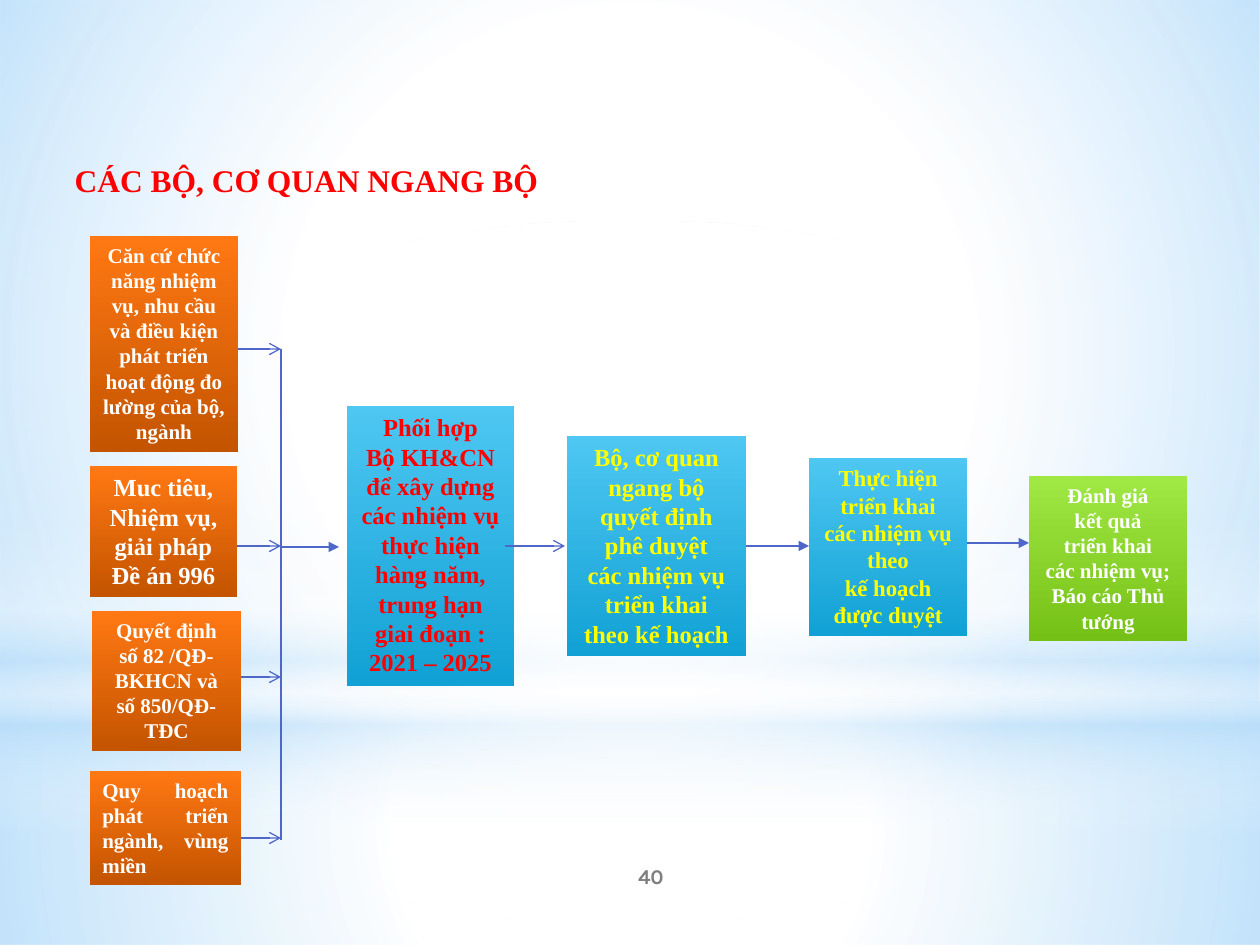
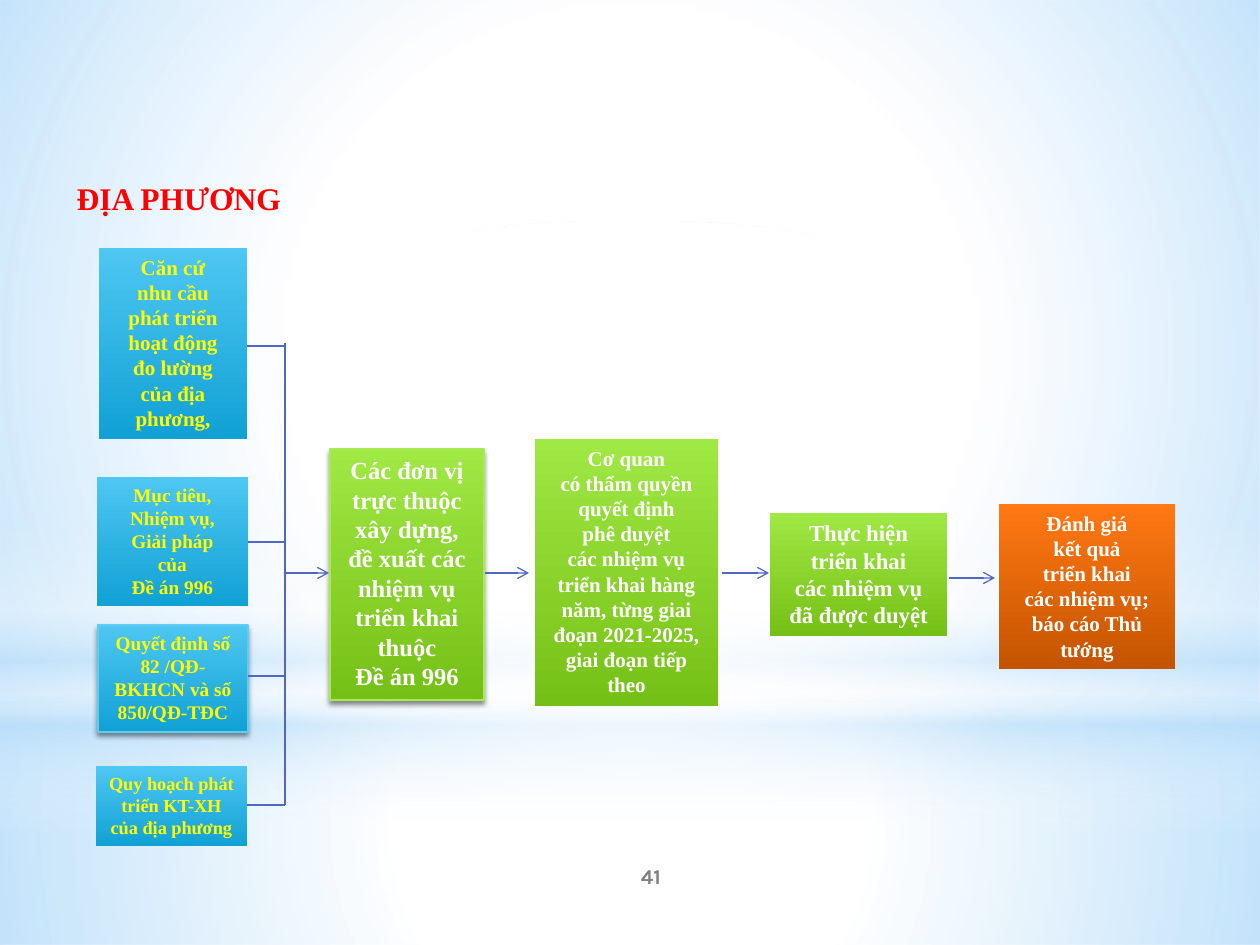
from collections import namedtuple

from lxml import etree
from pptx import Presentation
from pptx import util as u
from pptx.dml.color import RGBColor
from pptx.enum import shapes, text
from pptx.oxml import ns

PX = 914400 / 126
SERIF, SANS = "Times New Roman", "Karla"
RED = RGBColor(0xFF, 0x00, 0x00)
YELLOW = RGBColor(0xFF, 0xFF, 0x00)
WHITE = RGBColor(0xFF, 0xFF, 0xFF)
GREY = RGBColor(0x7F, 0x7F, 0x7F)
BLACK = RGBColor(0x00, 0x00, 0x00)
SKY = RGBColor(0xB4, 0xDC, 0xFA)
INDIGO = RGBColor(0x4E, 0x67, 0xC8)
BLUE_TOP, BLUE_END = RGBColor(0x4E, 0xC7, 0xF2), RGBColor(0x11, 0xA1, 0xD4)
GREEN_TOP, GREEN_END = RGBColor(0xA0, 0xE8, 0x44), RGBColor(0x75, 0xC0, 0x16)
ORANGE_TOP, ORANGE_END = RGBColor(0xFF, 0x78, 0x13), RGBColor(0xC4, 0x54, 0x00)
BLUE_EDGE, GREEN_EDGE = RGBColor(0x5E, 0xCC, 0xF3), RGBColor(0xA7, 0xEA, 0x52)
CENTER, LEFT, JUSTIFY = (
    text.PP_ALIGN.CENTER, text.PP_ALIGN.LEFT, text.PP_ALIGN.JUSTIFY)

Box = namedtuple("Box", "left top width height")
Look = namedtuple("Look", "top end ink edge", defaults=[None])
Source = namedtuple("Source", "box stub_y size lines align", defaults=[CENTER])
Stage = namedtuple("Stage", "box arrow head size look lines")

BLUE = Look(BLUE_TOP, BLUE_END, YELLOW)
BLUE_RED = BLUE._replace(ink=RED)
BLUE_RAISED = BLUE._replace(edge=BLUE_EDGE)
GREEN = Look(GREEN_TOP, GREEN_END, WHITE)
GREEN_RAISED = GREEN._replace(edge=GREEN_EDGE)
ORANGE = Look(ORANGE_TOP, ORANGE_END, WHITE)

BACKDROP = [
    (shapes.MSO_SHAPE.RECTANGLE, Box(0, 703, 1260, 242), True,
     [(0, WHITE, 91), (37, WHITE, 76), (100, SKY, 79)]),
    (shapes.MSO_SHAPE.RECTANGLE, Box(0, 0, 1260, 703), True,
     [(0, WHITE, 89), (48, WHITE, 62), (100, SKY, 79)]),
    (shapes.MSO_SHAPE.RECTANGLE, Box(0, 519, 1260, 315), False,
     [(0, WHITE, 0), (29, WHITE, 30), (45, SKY, 40),
      (55, WHITE, 26), (65, SKY, 60), (100, WHITE, 0)]),
    (shapes.MSO_SHAPE.OVAL, Box(0, 221, 1260, 703), True,
     [(0, WHITE, 100), (56, WHITE, 0)]),
]

MINISTRY_SOURCES = [
    (Source(Box(0, 0, 148, 216), 113, 12, [
        "Căn cứ chức năng nhiệm vụ, nhu cầu và điều kiện phát triển "
        "hoạt động đo lường của bộ, ngành"]), ORANGE),
    (Source(Box(0, 230, 147, 131), 310, 14, [
        "Muc tiêu, Nhiệm vụ,", "giải pháp", "Đề án 996"]), ORANGE),
    (Source(Box(2, 375, 149, 140), 441, 12, [
        "Quyết định số 82 /QĐ-BKHCN và số 850/QĐ-TĐC"]), ORANGE),
    (Source(Box(0, 535, 151, 114), 602, 12, [
        "Quy hoạch phát triển ngành, vùng miền"], JUSTIFY), ORANGE),
]
MINISTRY_STAGES = [
    Stage(Box(66, 0, 167, 280), (0, 58, 141), "triangle", 14, BLUE_RED, [
        "Phối hợp", "Bộ KH&CN để xây dựng các nhiệm vụ thực hiện hàng năm, "
        "trung hạn", "giai đoạn : 2021 – 2025"]),
    Stage(Box(286, 30, 179, 220), (224, 284, 140), "arrow", 14, BLUE, [
        "Bộ, cơ quan ngang bộ", "quyết định phê duyệt", "các nhiệm vụ",
        "triển khai theo kế hoạch"]),
    Stage(Box(528, 52, 158, 178), (465, 528, 140), "triangle", 13, BLUE, [
        "Thực hiện triển khai", "các nhiệm vụ", "theo",
        "kế hoạch được duyệt"]),
    Stage(Box(748, 70, 158, 165), (686, 748, 137), "triangle", 12, GREEN, [
        "Đánh giá", "kết quả", "triển khai", "các nhiệm vụ;",
        "Báo cáo Thủ tướng"]),
]
LOCAL_SOURCES = [
    (Source(Box(3, 0, 148, 191), 98, 12, [
        "Căn cứ", "nhu cầu", "phát triển hoạt động", "đo lường",
        "của địa phương,"]), BLUE),
    (Source(Box(1, 229, 151, 129), 294, 11, [
        "Mục tiêu, Nhiệm vụ,", "Giải pháp", "của", "Đề án 996"]), BLUE),
    (Source(Box(2, 377, 150, 107), 428, 11, [
        "Quyết định số 82 /QĐ-BKHCN và số 850/QĐ-TĐC"]), BLUE_RAISED),
    (Source(Box(0, 518, 151, 80), 557, 10.5, [
        "Quy hoạch phát triển KT-XH của địa phương"]), BLUE),
]
LOCAL_STAGES = [
    Stage(Box(46, 10, 154, 251), (0, 45, 134), "arrow", 14, GREEN_RAISED, [
        "Các đơn vị trực thuộc xây dựng, đề xuất các nhiệm vụ",
        "triển khai thuộc", "Đề án 996"]),
    Stage(Box(251, 0, 183, 267), (201, 245, 134), "arrow", 12, GREEN, [
        "Cơ quan", "có thẩm quyền", "quyết định", "phê duyệt",
        "các nhiệm vụ", "triển khai hàng năm, từng giai đoạn 2021-2025, "
        "giai đoạn tiếp theo"]),
    Stage(Box(486, 74, 177, 123), (438, 485, 134), "arrow", 13, GREEN, [
        "Thực hiện", "triển khai", "các nhiệm vụ", "đã được duyệt"]),
    Stage(Box(715, 65, 176, 165), (665, 711, 139), "arrow", 12, ORANGE, [
        "Đánh giá", "kết quả", "triển khai",
        "các nhiệm vụ; báo cáo Thủ tướng"]),
]


def emu(*lengths):
    """Turn px lengths into EMU."""
    return [u.Emu(round(length * PX)) for length in lengths]


def within(region, box):
    """Move a box from region coordinates to slide coordinates."""
    return box._replace(left=region.left + box.left, top=region.top + box.top)


def add_element(parent, tag, **attributes):
    """Append a DrawingML element with the given attributes."""
    element = etree.SubElement(parent, ns.qn(tag))
    for name, value in attributes.items():
        element.set(name, str(value))
    return element


def add_color(parent, color, opacity):
    """Append a colour with an opacity in percent."""
    element = add_element(parent, "a:srgbClr", val=color)
    if opacity < 100:
        add_element(element, "a:alpha", val=opacity * 1000)


def set_gradient(shape, stops, radial=False):
    """Fill a shape with a downward or radial gradient."""
    shape.fill.background()
    properties = shape.element.spPr
    gradient = etree.Element(ns.qn("a:gradFill"), rotWithShape="1")
    stop_list = add_element(gradient, "a:gsLst")
    for position, color, opacity in stops:
        add_color(add_element(stop_list, "a:gs", pos=position * 1000),
                  color, opacity)
    if radial:
        path = add_element(gradient, "a:path", path="circle")
        add_element(path, "a:fillToRect", l=50000, t=50000, r=50000, b=50000)
    else:
        add_element(gradient, "a:lin", ang=5400000, scaled=0)
    properties.replace(properties.find(ns.qn("a:noFill")), gradient)


def write(frame, lines, size, color, align=CENTER, font=SERIF,
          anchor=text.MSO_ANCHOR.TOP):
    """Write bold paragraphs into a wrapped text frame."""
    layout = {"word_wrap": True, "auto_size": text.MSO_AUTO_SIZE.NONE,
              "vertical_anchor": anchor}
    for name, value in layout.items():
        setattr(frame, name, value)
    frame.text = "\n".join(lines)
    styles = {"name": font, "size": u.Pt(size), "bold": True}
    for paragraph in frame.paragraphs:
        paragraph.alignment = align
        for run in paragraph.runs:
            for name, value in styles.items():
                setattr(run.font, name, value)
            run.font.color.rgb = color


def add_gradient_shape(slide, kind, box, stops, radial=False):
    """Add an unlined shape with a gradient fill."""
    shape = slide.shapes.add_shape(kind, *emu(*box))
    shape.shadow.inherit = False
    shape.line.fill.background()
    set_gradient(shape, stops, radial)
    return shape


def add_step(slide, box, look, size, lines, align=CENTER):
    """Add one text block, raised by a shadow when it has an edge."""
    shape = add_gradient_shape(slide, shapes.MSO_SHAPE.RECTANGLE, box,
                               [(0, look.top, 100), (100, look.end, 100)])
    write(shape.text_frame, lines, size, look.ink, align)
    if look.edge is not None:
        shape.line.color.rgb = look.edge
        shape.line.width = u.Pt(0.75)
        effects = shape.element.spPr.find(ns.qn("a:effectLst"))
        shadow = add_element(effects, "a:outerShdw", blurRad=u.Pt(3.1),
                             dist=u.Pt(1.8), dir=5400000, rotWithShape=0)
        add_color(shadow, BLACK, 45)


def add_line(slide, start, end, head=None):
    """Draw a thin line with an optional arrowhead."""
    connector = slide.shapes.add_connector(
        shapes.MSO_CONNECTOR.STRAIGHT, *emu(*start, *end))
    connector.line.color.rgb = INDIGO
    connector.line.width = u.Pt(0.75)
    properties = connector.element.spPr
    if head:
        add_element(properties.find(ns.qn("a:ln")), "a:tailEnd", type=head)
    add_element(properties, "a:effectLst")


def add_backdrop(slide):
    """Build the sky backdrop and place it behind the slide's layout."""
    tree = slide.slide_layout.shapes.element
    for index, (kind, box, radial, stops) in enumerate(BACKDROP, 2):
        shape = add_gradient_shape(slide, kind, box, stops, radial)
        tree.insert(index, shape.element)


def add_heading(slide, box, title):
    """Move and format the title placeholder."""
    heading = slide.shapes.title
    for name, value in zip(box._fields, emu(*box)):
        setattr(heading, name, value)
    write(heading.text_frame, [title], 18, RED, LEFT)


def add_page_number(slide, box, number):
    """Write the page number at the foot of the slide."""
    frame = slide.shapes.add_textbox(*emu(*box)).text_frame
    write(frame, [str(number)], 12, GREY, font=SANS,
          anchor=text.MSO_ANCHOR.MIDDLE)


def add_sources(slide, region, sources, trunk, head=None):
    """Stack the source blocks and join them to a trunk on the right."""
    trunk_x = region.left + region.width
    for source, look in sources:
        box = within(region, source.box)
        add_step(slide, box, look, source.size, source.lines, source.align)
        y = region.top + source.stub_y
        add_line(slide, (box.left + box.width, y), (trunk_x, y), head)
    top, bottom = (region.top + y for y in trunk)
    add_line(slide, (trunk_x, top), (trunk_x, bottom))


def add_stages(slide, region, stages):
    """Place the stages in a row, each with its incoming arrow."""
    for stage in stages:
        add_step(slide, within(region, stage.box), stage.look, stage.size,
                 stage.lines)
    for stage in stages:
        start, end, y = stage.arrow
        add_line(slide, (region.left + start, region.top + y),
                 (region.left + end, region.top + y), stage.head)


def add_process_slide(presentation, title, title_box, number):
    """Add a title-only slide with its heading and page number."""
    slide = presentation.slides.add_slide(presentation.slide_layouts[5])
    add_heading(slide, title_box, title)
    add_page_number(slide, Box(525, 851, 252, 50), number)
    return slide


def main():
    """Build the two process slides."""
    presentation = Presentation()
    presentation.slide_width, presentation.slide_height = emu(1260, 945)

    ministry = add_process_slide(presentation, "CÁC BỘ, CƠ QUAN NGANG BỘ",
                                 Box(62, 155, 746, 50), 40)
    add_backdrop(ministry)
    add_sources(ministry, Box(90, 236, 191, 649), MINISTRY_SOURCES,
                (113, 604), "arrow")
    add_stages(ministry, Box(281, 406, 906, 280), MINISTRY_STAGES)

    local = add_process_slide(presentation, "ĐỊA PHƯƠNG",
                              Box(64, 173, 809, 50), 41)
    add_sources(local, Box(96, 248, 189, 598), LOCAL_SOURCES, (95, 557))
    add_stages(local, Box(284, 439, 891, 267), LOCAL_STAGES)
    presentation.save("out.pptx")


if __name__ == "__main__":
    main()
